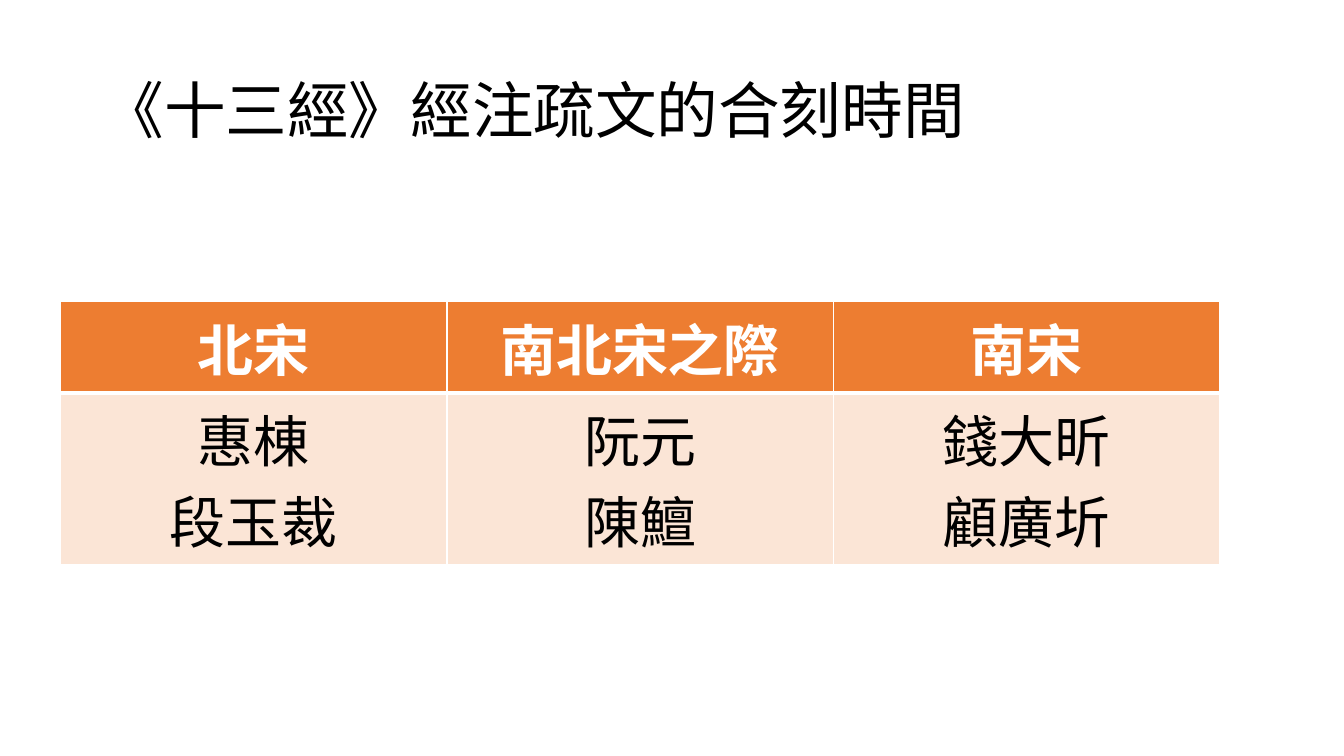
from lxml import etree
from pptx import Presentation
from pptx.dml.color import RGBColor
from pptx.enum import text
from pptx.oxml import ns
from pptx.util import Cm, Pt

WHITE, BLACK, ORANGE, PEACH = "FFFFFF", "000000", "ED7D31", "FBE5D6"
TITLE_FONT, TABLE_FONT = "Noto Sans CJK JP", "Noto Sans CJK SC"
PERIODS = [
    ("北宋", ["惠棟", "段玉裁"]),
    ("南北宋之際", ["阮元", "陳鱣"]),
    ("南宋", ["錢大昕", "顧廣圻"]),
]


def rgb(color):
    return RGBColor.from_string(color)


def add_run(p, words, font, size, color, bold=False):
    r = p.add_run()
    r.text = words
    r.font.name = font
    r.font.size = Pt(size)
    r.font.bold = bold
    r.font.color.rgb = rgb(color)
    ea = etree.SubElement(r.font._element, ns.qn("a:ea"))
    ea.set("typeface", font)


def set_borders(cell, color, bottom):
    """Draw 1 pt borders, with the bottom one of the given width."""
    tc_pr = cell._tc.get_or_add_tcPr()
    for i, (side, width) in enumerate(zip("LRTB", (1, 1, 1, bottom))):
        ln = etree.Element(ns.qn(f"a:ln{side}"), w=str(Pt(width)))
        fill = etree.SubElement(ln, ns.qn("a:solidFill"))
        etree.SubElement(fill, ns.qn("a:srgbClr"), val=color)
        tc_pr.insert(i, ln)


def fill_cell(cell, lines, fill, color, bold=False, bottom=1):
    cell.fill.solid()
    cell.fill.fore_color.rgb = rgb(fill)
    set_borders(cell, WHITE, bottom)
    tf = cell.text_frame
    for i, line in enumerate(lines):
        p = tf.add_paragraph() if i else tf.paragraphs[0]
        p.alignment = text.PP_ALIGN.CENTER
        add_run(p, line, TABLE_FONT, 40, color, bold)


def add_title(s, words):
    sp = s.shapes.title
    sp.left, sp.top, sp.width, sp.height = Cm(2.33), Cm(1.01), Cm(29.21), Cm(3.68)
    tf = sp.text_frame
    tf.word_wrap = True
    tf.vertical_anchor = text.MSO_ANCHOR.MIDDLE
    p = tf.paragraphs[0]
    p.alignment = text.PP_ALIGN.LEFT
    p.line_spacing = 0.9
    add_run(p, words, TITLE_FONT, 44, BLACK)


def add_period_table(s, periods):
    frame = s.shapes.add_table(2, len(periods), Cm(1.53), Cm(7.6), Cm(29.2), Cm(6.5))
    table = frame.table
    table.rows[0].height, table.rows[1].height = Cm(2.2), Cm(4.3)
    for col, (period, scholars) in enumerate(periods):
        fill_cell(table.cell(0, col), [period], ORANGE, WHITE, bold=True, bottom=3)
        fill_cell(table.cell(1, col), scholars, PEACH, BLACK)
        set_top = table.cell(1, col)._tc.tcPr.find(ns.qn("a:lnT"))
        set_top.set("w", str(Pt(3)))


def main():
    prs = Presentation()
    prs.slide_width, prs.slide_height = Cm(33.87), Cm(19.05)
    s = prs.slides.add_slide(prs.slide_layouts[5])
    add_title(s, "《十三經》經注疏文的合刻時間")
    add_period_table(s, PERIODS)
    prs.save("out.pptx")


if __name__ == "__main__":
    main()
